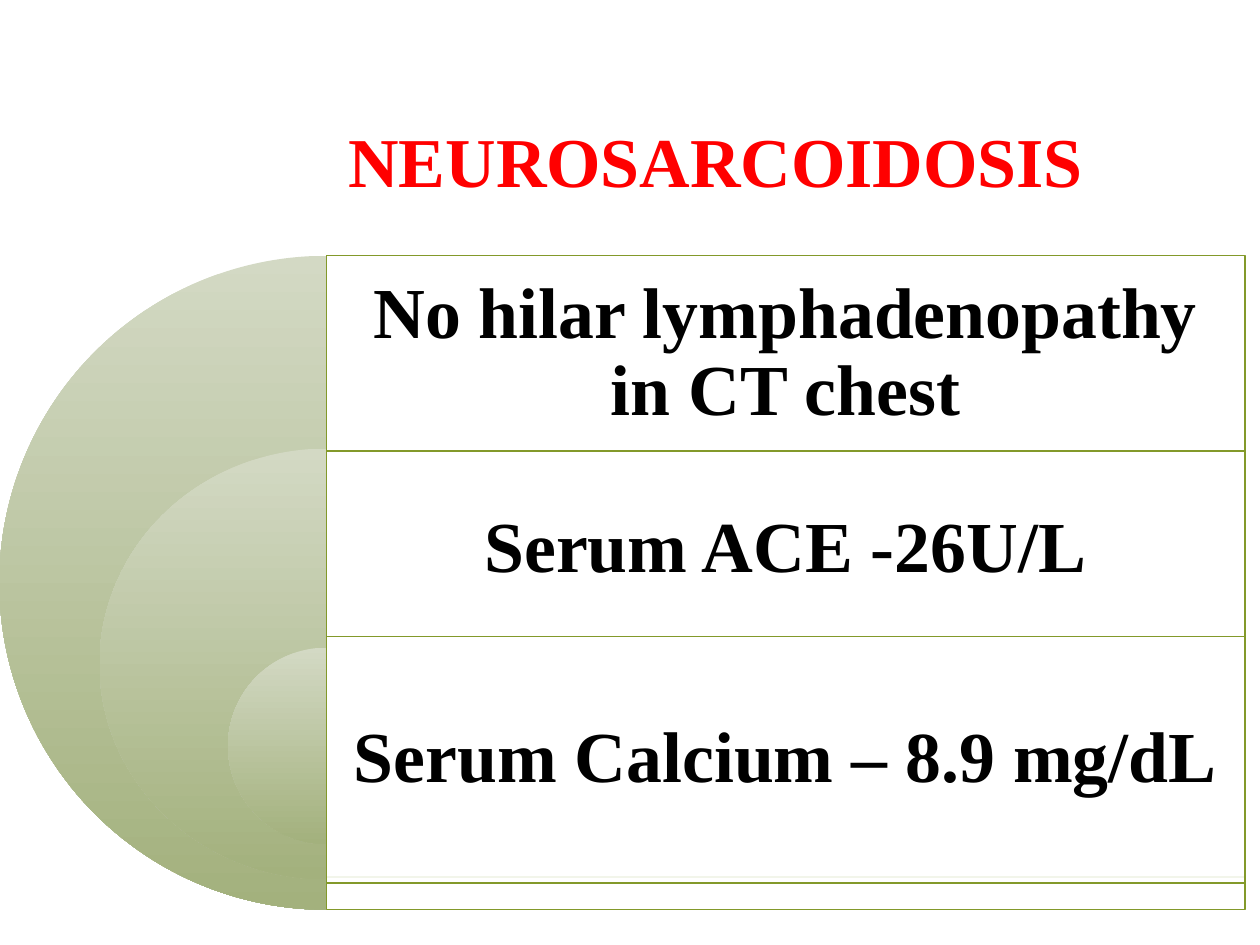
from lxml import etree
from pptx import Presentation
from pptx.dml.color import RGBColor
from pptx.enum.shapes import MSO_SHAPE
from pptx.enum.text import MSO_ANCHOR, PP_ALIGN
from pptx.oxml.ns import qn
from pptx.util import Inches, Pt

PIE, RECTANGLE = MSO_SHAPE.PIE, MSO_SHAPE.RECTANGLE
MIDDLE, CENTER = MSO_ANCHOR.MIDDLE, PP_ALIGN.CENTER
FONT = "Times New Roman"


def paint(color_format, hex_color):
    color_format.rgb = RGBColor.from_string(hex_color)


def write(frame, words, size, hex_color):
    frame.word_wrap = True
    frame.vertical_anchor = MIDDLE
    frame.text = words
    paragraph = frame.paragraphs[0]
    paragraph.alignment = CENTER
    font = paragraph.runs[0].font
    font.name, font.size, font.bold = FONT, Pt(size), True
    paint(font.color, hex_color)
    return paragraph


prs = Presentation()
prs.slide_width, prs.slide_height = Inches(10), Inches(7.5)
slide = prs.slides.add_slide(prs.slide_layouts[5])

heading = slide.shapes.title
heading.left, heading.top = Inches(1.54), Inches(0.5)
heading.width, heading.height = Inches(7.72), Inches(1.53)
heading.text_frame.margin_left = Inches(0.66)
write(heading.text_frame, "NEUROSARCOIDOSIS", 40, "FF0000")

axis = Inches(2.59)
panel_width = Inches(7.29)
padding = Inches(0.17)
findings = [
    ("No hilar lymphadenopathy in CT chest", 2.03, 5.19, 1.56, 2.03, 5.19, 5.19),
    ("Serum ACE -26U/L", 3.58, 3.38, 1.56, 3.56, 3.6, 3.42),
    ("Serum Calcium – 8.9 mg/dL", 5.05, 1.96, 1.96, 5.14, 1.56, 1.56),
]

for finding, top, panel_height, row_height, arc_top, arc_width, arc_height in findings:
    arc = slide.shapes.add_shape(
        PIE, axis - Inches(arc_width / 2), Inches(arc_top),
        Inches(arc_width), Inches(arc_height))
    arc.adjustments[0], arc.adjustments[1] = 54, 162
    arc.shadow.inherit = False
    arc.line.fill.background()
    arc.fill.gradient()
    arc.fill.gradient_angle = 270
    for stop, hex_color in zip(arc.fill.gradient_stops, ("D3D9C4", "A3B17D")):
        paint(stop.color, hex_color)

    panel = slide.shapes.add_shape(
        RECTANGLE, axis, Inches(top), panel_width, Inches(panel_height))
    panel.shadow.inherit = False
    panel.fill.solid()
    paint(panel.fill.fore_color, "FFFFFF")
    white = panel.fill._xPr.find(qn("a:solidFill")).find(qn("a:srgbClr"))
    etree.SubElement(white, qn("a:alpha")).set("val", "90000")
    paint(panel.line.color, "83992A")
    panel.line.width = Pt(0.75)

    label = slide.shapes.add_textbox(
        axis, Inches(top), panel_width, Inches(row_height)).text_frame
    label.margin_left = label.margin_right = padding
    label.margin_top = label.margin_bottom = padding
    write(label, finding, 41, "000000").line_spacing = 0.9

prs.save("out.pptx")
